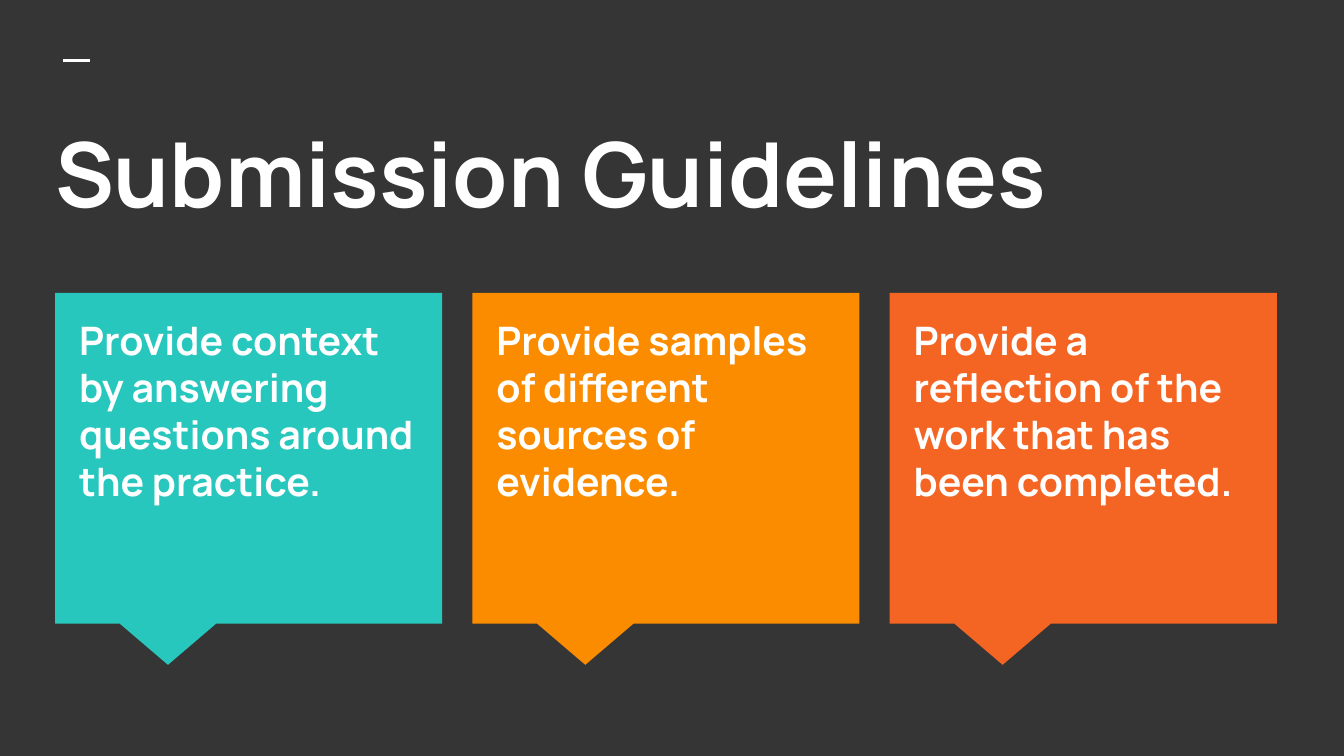
from typing import NamedTuple

from lxml import etree
from pptx import Presentation
from pptx.dml.color import RGBColor
from pptx.enum.shapes import MSO_CONNECTOR, MSO_SHAPE
from pptx.enum.text import MSO_ANCHOR, MSO_AUTO_SIZE, PP_ALIGN
from pptx.oxml.ns import qn
from pptx.slide import Slide
from pptx.text.text import TextFrame
from pptx.util import Inches, Pt

STRAIGHT = MSO_CONNECTOR.STRAIGHT
CALLOUT = MSO_SHAPE.RECTANGULAR_CALLOUT
TOP = MSO_ANCHOR.TOP
NO_AUTOFIT = MSO_AUTO_SIZE.NONE
LEFT = PP_ALIGN.LEFT

CHARCOAL = RGBColor(0x35, 0x35, 0x35)
WHITE = RGBColor(0xFF, 0xFF, 0xFF)
TEAL = RGBColor(0x27, 0xC7, 0xBD)
AMBER = RGBColor(0xFB, 0x8C, 0x00)
ORANGE = RGBColor(0xF4, 0x65, 0x24)

FONT = "Manrope"
TITLE_ONLY = 5
SLIDE_WIDTH = 10
SLIDE_HEIGHT = SLIDE_WIDTH * 9 / 16
FIRST_LEFT, LAST_LEFT = 0.41, 6.62
TEXT_INDENT = 0.08


class Card(NamedTuple):
    text: str
    color: RGBColor


CARDS = [
    Card("Provide context by answering questions around the practice.", TEAL),
    Card("Provide samples of different sources of evidence.", AMBER),
    Card("Provide a reflection of the work that has been completed.", ORANGE),
]
CARD_STEP = (LAST_LEFT - FIRST_LEFT) / (len(CARDS) - 1)


def write_text(frame: TextFrame, text: str, *, size: float,
               color: RGBColor = WHITE, bold: bool = True) -> None:
    frame.word_wrap = True
    frame.auto_size = NO_AUTOFIT
    frame.vertical_anchor = TOP
    frame.margin_left = frame.margin_right = Inches(0.1)
    frame.margin_top = frame.margin_bottom = Inches(0.1)
    para = frame.paragraphs[0]
    para.alignment = LEFT
    span = para.add_run()
    span.text = text
    span.font.name = FONT
    span.font.size = Pt(size)
    span.font.bold = bold
    span.font.color.rgb = color


def add_accent_line(page: Slide) -> None:
    line = page.shapes.add_connector(
        STRAIGHT, Inches(0.47), Inches(0.45), Inches(0.67), Inches(0.45))
    line.line.color.rgb = WHITE
    line.line.width = Pt(1.5)
    etree.SubElement(line._element.spPr, qn("a:effectLst"))


def add_title(page: Slide, text: str) -> None:
    title = page.shapes.title
    title.left, title.top = Inches(0.31), Inches(0.78)
    title.width, title.height = Inches(9.43), Inches(1.12)
    write_text(title.text_frame, text, size=48)


def add_card(page: Slide, card: Card, left: float) -> None:
    callout = page.shapes.add_shape(
        CALLOUT, Inches(left), Inches(2.18), Inches(2.88), Inches(2.46))
    callout.adjustments[0] = -5 / 24
    callout.adjustments[1] = 5 / 8
    callout.shadow.inherit = False
    callout.fill.solid()
    callout.fill.fore_color.rgb = card.color
    callout.line.fill.background()
    box = page.shapes.add_textbox(
        Inches(left + TEXT_INDENT), Inches(2.25), Inches(2.71), Inches(2.19))
    write_text(box.text_frame, card.text, size=21)


def main() -> None:
    deck = Presentation()
    deck.slide_width = Inches(SLIDE_WIDTH)
    deck.slide_height = Inches(SLIDE_HEIGHT)
    page = deck.slides.add_slide(deck.slide_layouts[TITLE_ONLY])
    page.background.fill.solid()
    page.background.fill.fore_color.rgb = CHARCOAL

    add_accent_line(page)
    add_title(page, "Submission Guidelines")
    for index, card in enumerate(CARDS):
        add_card(page, card, FIRST_LEFT + index * CARD_STEP)

    deck.save("out.pptx")


if __name__ == "__main__":
    main()
